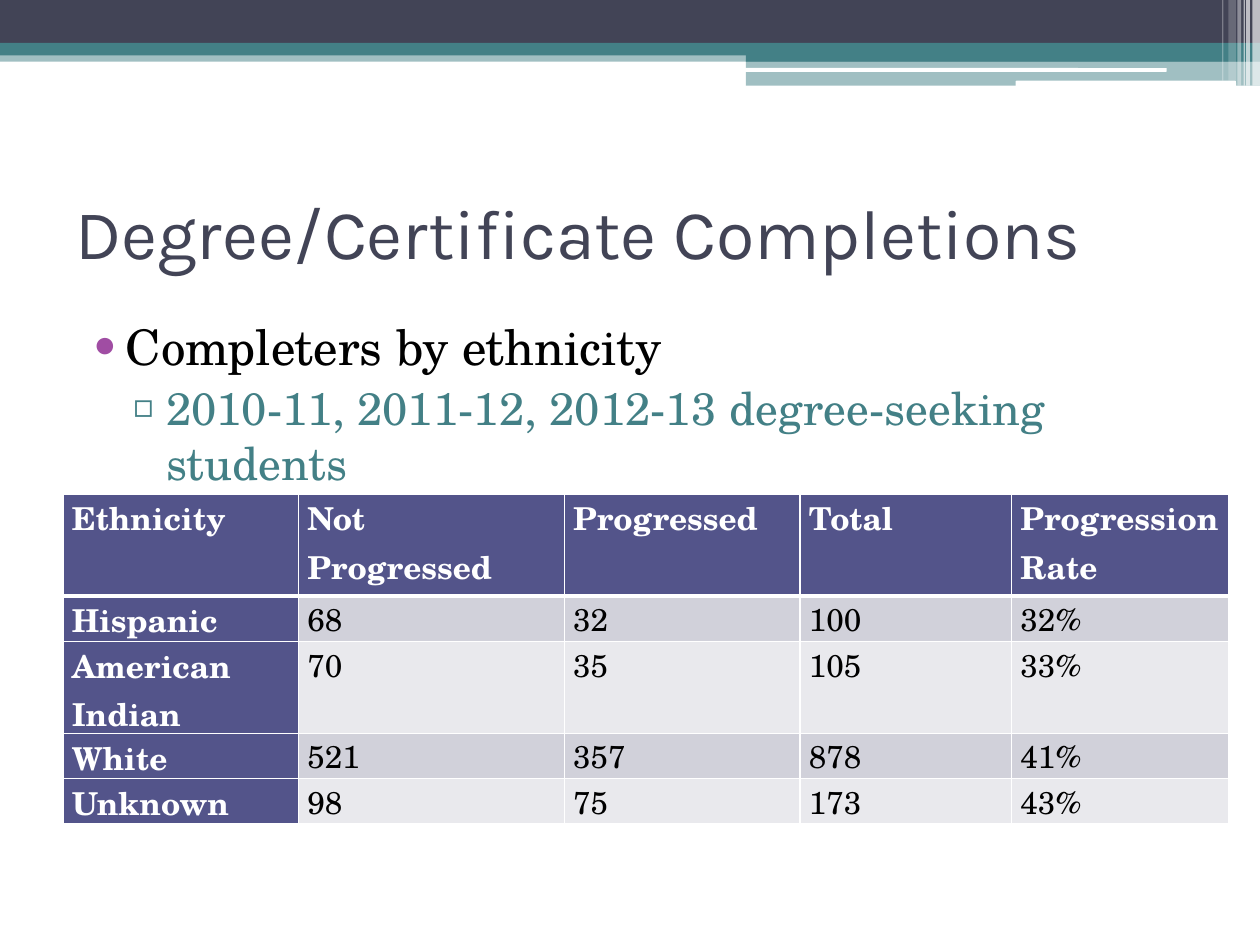
from lxml import etree
from pptx import Presentation
from pptx.dml.color import RGBColor
from pptx.enum import shapes, text
from pptx.oxml import ns
from pptx.util import Inches, Pt

NAVY, TEAL, WHITE, BLACK = "424456", "438086", "FFFFFF", "000000"
INDIGO, DARK_BAND, LIGHT_BAND = "53548A", "D1D1DA", "E9E9ED"
SERIF = "TeX Gyre Schola"


def color(value):
    return RGBColor.from_string(value)


def add_run(paragraph, words, hue, **font_format):
    run = paragraph.add_run()
    run.text = words
    run.font.color.rgb = color(hue)
    for name, value in font_format.items():
        setattr(run.font, name, value)


presentation = Presentation()
presentation.slide_width, presentation.slide_height = Inches(10), Inches(7.5)
slide = presentation.slides.add_slide(presentation.slide_layouts[6])

# Header bands, white rules and corner stripes: left, top, width, height, fill, opacity %
bands = [
    (0, 0.4, 10, 0.09, TEAL, 50),
    (0, 0, 10, 0.34, NAVY, 100),
    (0, 0.34, 10, 0.1, TEAL, 100),
    (5.92, 0.39, 4.08, 0.1, TEAL, 100),
    (5.92, 0.48, 4.08, 0.2, TEAL, 50),
]
rules = [(5.91, 0.54, 3.35, 0.03, WHITE, 100), (8.06, 0.64, 1.75, 0.05, WHITE, 100)]
stripes = [
    (left, 0, width, height, WHITE, opacity)
    for left, width, height, opacity in [
        (9.94, 0.06, 0.68, 65), (9.89, 0.03, 0.68, 65), (9.87, 0.01, 0.68, 60),
        (9.82, 0.03, 0.68, 40), (9.75, 0.06, 0.64, 20), (9.7, 0.01, 0.64, 30),
    ]
]
for part in bands + rules + stripes:
    *box, fill, opacity = part
    rounded = part in rules
    preset = shapes.MSO_SHAPE.ROUNDED_RECTANGLE if rounded else shapes.MSO_SHAPE.RECTANGLE
    shape = slide.shapes.add_shape(preset, *map(Inches, box))
    shape.shadow.inherit = False
    shape.line.fill.background()
    shape.fill.solid()
    shape.fill.fore_color.rgb = color(fill)
    if opacity < 100:
        fill_color = shape.fill._xPr.find(".//" + ns.qn("a:srgbClr"))
        etree.SubElement(fill_color, ns.qn("a:alpha"), val=str(opacity * 1000))

# Title
title = slide.shapes.add_textbox(Inches(0.5), Inches(1.25), Inches(9), Inches(1.17))
title.text_frame.word_wrap = True
title.text_frame.vertical_anchor = text.MSO_ANCHOR.MIDDLE
add_run(title.text_frame.paragraphs[0], "Degree/Certificate Completions", NAVY,
        name="Karla", size=Pt(40))

# Bulleted text: words, size, colour, bullet, bullet colour, margin, indent
bullets = [
    ("Completers by ethnicity", 28, BLACK, "•", "A04DA3", 0.4, -0.28),
    ("2010-11, 2011-12, 2012-13 degree-seeking students", 26, TEAL, "▫", TEAL, 0.72, -0.27),
]
body = slide.shapes.add_textbox(Inches(0.5), Inches(2.46), Inches(9), Inches(4.73))
body.text_frame.word_wrap = True
for level, (words, size, hue, mark, mark_hue, margin, indent) in enumerate(bullets):
    paragraph = body.text_frame.add_paragraph() if level else body.text_frame.paragraphs[0]
    paragraph.level = level
    paragraph.space_before = Pt(3)
    add_run(paragraph, words, hue, name=SERIF, size=Pt(size))
    properties = paragraph._p.get_or_add_pPr()
    properties.set("marL", str(Inches(margin)))
    properties.set("indent", str(Inches(indent)))
    bullet_color = etree.SubElement(properties, ns.qn("a:buClr"))
    etree.SubElement(bullet_color, ns.qn("a:srgbClr"), val=mark_hue)
    etree.SubElement(properties, ns.qn("a:buFont"), typeface=SERIF)
    etree.SubElement(properties, ns.qn("a:buChar"), char=mark)

# Completion table
rows = [
    ("Ethnicity", "Not Progressed", "Progressed", "Total", "Progression Rate"),
    ("Hispanic", "68", "32", "100", "32%"),
    ("American Indian", "70", "35", "105", "33%"),
    ("White", "521", "357", "878", "41%"),
    ("Unknown", "98", "75", "173", "43%"),
]
column_widths = [1.87, 2.11, 1.87, 1.68, 1.72]
row_heights = [0.81, 0.36, 0.73, 0.36, 0.36]
table = slide.shapes.add_table(len(rows), len(column_widths), Inches(0.5), Inches(3.92),
                               Inches(9.25), Inches(2.63)).table
table.first_col = True
for column, width in zip(table.columns, column_widths):
    column.width = Inches(width)
for row, height in zip(table.rows, row_heights):
    row.height = Inches(height)

cell_format = {"margin_left": Inches(0.07), "margin_right": Inches(0.07),
               "margin_top": 0, "margin_bottom": 0}
for row_index, values in enumerate(rows):
    for column_index, value in enumerate(values):
        cell = table.cell(row_index, column_index)
        heading = row_index == 0 or column_index == 0
        for name, setting in cell_format.items():
            setattr(cell, name, setting)
        add_run(cell.text_frame.paragraphs[0], value, WHITE if heading else BLACK,
                name=SERIF, size=Pt(18), bold=heading)

        # Borders come before the fill in the cell properties
        cell_properties = cell._tc.get_or_add_tcPr()
        for side in ("L", "R", "T", "B"):
            under_header = (row_index, side) in ((0, "B"), (1, "T"))
            border = etree.SubElement(cell_properties, ns.qn("a:ln" + side),
                                      w=str(Pt(3 if under_header else 1)))
            border_fill = etree.SubElement(border, ns.qn("a:solidFill"))
            etree.SubElement(border_fill, ns.qn("a:srgbClr"), val=WHITE)
        cell.fill.solid()
        band = DARK_BAND if row_index % 2 else LIGHT_BAND
        cell.fill.fore_color.rgb = color(INDIGO if heading else band)

presentation.save("out.pptx")
